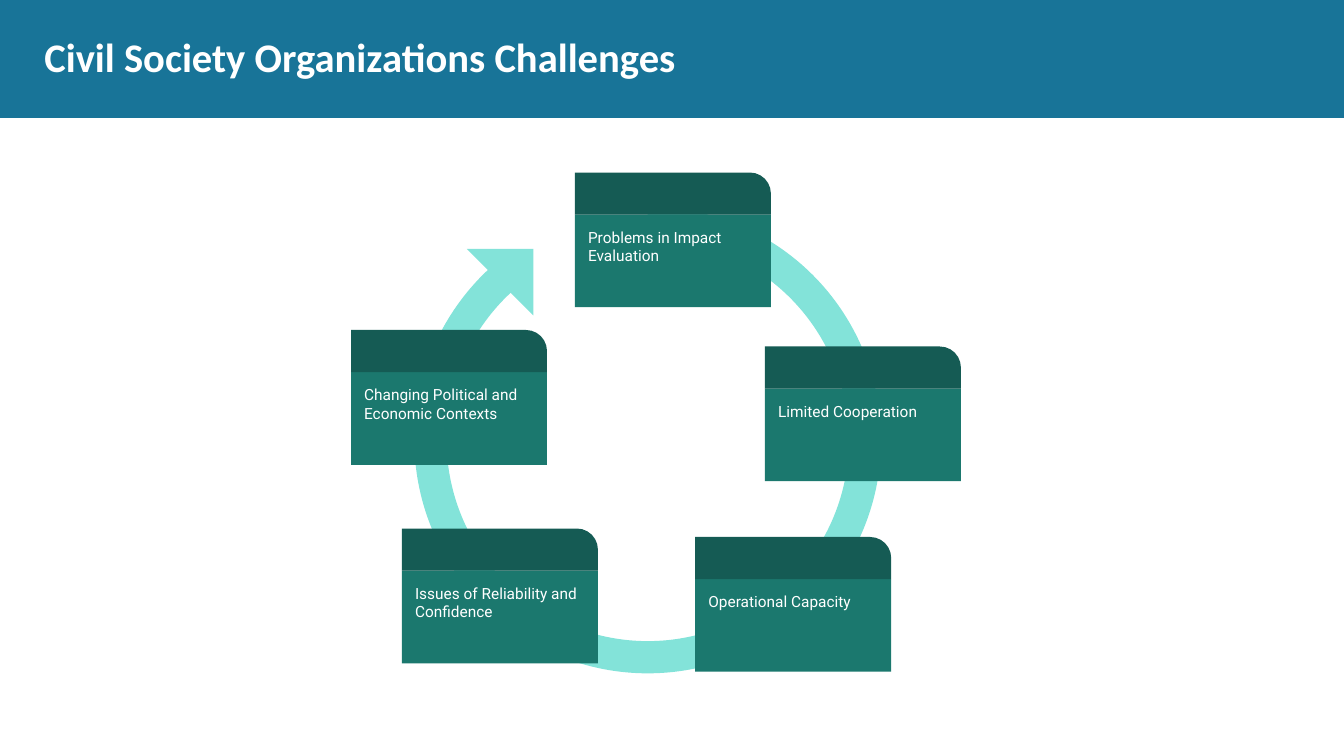
from pptx import Presentation
from pptx import util as u
from pptx.dml import color
from pptx.enum import shapes, text

COLORS = {"band": "187498", "cycle": "83E3D9", "tab": "155B54", "card": "1B786E", "text": "FFFFFF"}
KIND = shapes.MSO_SHAPE

deck = Presentation()
deck.slide_width, deck.slide_height = u.Inches(13.333), u.Inches(7.5)
x_share, y_share = deck.slide_width / 100, deck.slide_height / 100
slide = deck.slides.add_slide(deck.slide_layouts[5])


def block(kind, left, top, width, height, fill, rotation=0, adjustments=()):
    part = slide.shapes.add_shape(kind, round(left * x_share), round(top * y_share),
                                  round(width * x_share), round(height * y_share))
    part.shadow.inherit = False
    part.fill.solid()
    part.fill.fore_color.rgb = color.RGBColor.from_string(COLORS[fill])
    part.line.fill.background()
    part.rotation = rotation
    for index, value in enumerate(adjustments):
        part.adjustments[index] = value
    return part


def write(holder, wording, inset, frame_format, paragraph_format, font_format):
    frame = holder.text_frame
    frame.text = wording
    margins = {f"margin_{side}": u.Inches(inset) for side in ("left", "top", "right", "bottom")}
    paragraph = frame.paragraphs[0]
    font = paragraph.runs[0].font
    for target, values in ((frame, {**margins, **frame_format}),
                           (paragraph, paragraph_format), (font, font_format)):
        for name, value in values.items():
            setattr(target, name, value)
    font.color.rgb = color.RGBColor.from_string(COLORS["text"])


block(KIND.RECTANGLE, 0, 0, 100, 15.6, "band")
block(KIND.BLOCK_ARC, 30.83, 27.33, 34.73, 61.73, "cycle", 180, (53.998, 30.127, 0.069))
block(KIND.RIGHT_TRIANGLE, 34.73, 32.93, 4.95, 8.8, "cycle", 180)

card_width, tab_height, card_height = 14.58, 5.56, 12.27
challenges = [
    ("Problems in Impact Evaluation", 42.78, 22.82),
    ("Changing Political and Economic Contexts", 26.12, 43.65),
    ("Operational Capacity", 51.73, 71.03),
    ("Issues of Reliability and Confidence", 29.91, 69.91),
    ("Limited Cooperation", 56.92, 45.83),
]
for challenge, left, top in challenges:
    card = block(KIND.RECTANGLE, left, top + tab_height, card_width, card_height, "card")
    write(card, challenge, 0.13,
          {"word_wrap": True, "vertical_anchor": text.MSO_ANCHOR.TOP},
          {"alignment": text.PP_ALIGN.LEFT},
          {"name": "Roboto", "size": u.Pt(11)})
    block(KIND.ROUND_1_RECTANGLE, left, top, card_width, tab_height, "tab", 0, (0.5,))

heading = slide.shapes.title
slide.shapes._spTree.append(heading._element)
heading_place = {"left": 3.3 * x_share, "top": 2.53 * y_share,
                 "width": 93.45 * x_share, "height": 9.87 * y_share}
for name, value in heading_place.items():
    setattr(heading, name, round(value))
write(heading, "Civil Society Organizations Challenges", 0,
      {"word_wrap": True, "vertical_anchor": text.MSO_ANCHOR.MIDDLE, "auto_size": text.MSO_AUTO_SIZE.NONE},
      {"alignment": text.PP_ALIGN.LEFT, "space_before": u.Pt(12)},
      {"name": "Calibri", "size": u.Pt(29), "bold": True})

deck.save("out.pptx")
